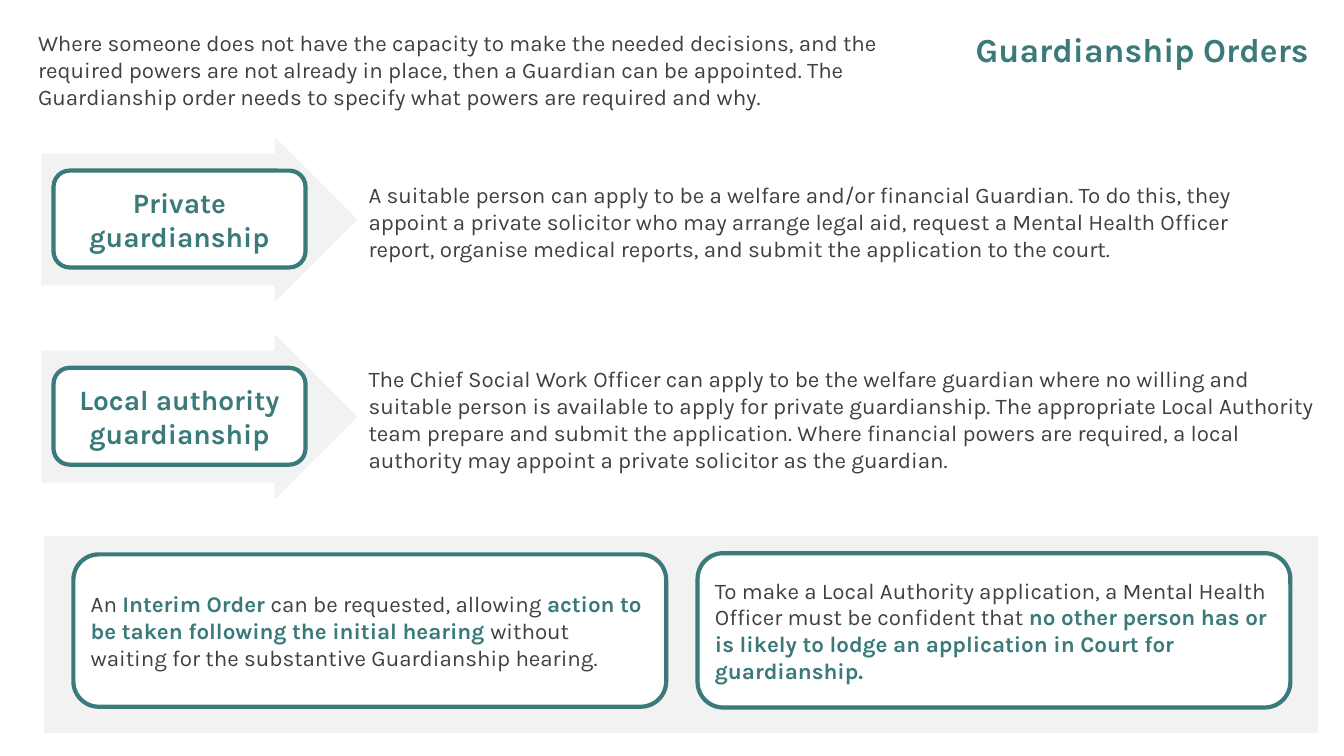
from pptx import Presentation
from pptx.dml.color import RGBColor
from pptx.enum.shapes import MSO_SHAPE as Preset
from pptx.enum.text import MSO_ANCHOR as Anchor, PP_ALIGN as Align
from pptx.util import Cm, Pt

TEAL = RGBColor(0x3A, 0x7A, 0x7A)
INK = RGBColor(0x40, 0x40, 0x40)
PALE = RGBColor(0xF2, 0xF2, 0xF2)
WHITE = RGBColor(0xFF, 0xFF, 0xFF)
FONT = "Karla"

ROUTES = [
    ("Private guardianship", 3.51, (4.17, 23.85, 2.82),
     "A suitable person can apply to be a welfare and/or financial Guardian. To do this, they "
     "appoint a private solicitor who may arrange legal aid, request a Mental Health Officer "
     "report, organise medical reports, and submit the application to the court."),
    ("Local authority guardianship", 8.48, (8.51, 24.82, 4.11),
     "The Chief Social Work Officer can apply to be the welfare guardian where no willing and "
     "suitable person is available to apply for private guardianship. The appropriate Local "
     "Authority team prepare and submit the application. Where financial powers are required, "
     "a local authority may appoint a private solicitor as the guardian."),
]


def write(frame, *parts, size=16, color=INK, bold=False, align=Align.LEFT, anchor=Anchor.MIDDLE):
    """Fill a text frame with plain parts and (text, True) emphasised parts."""
    frame.word_wrap = True
    frame.vertical_anchor = anchor
    para = frame.paragraphs[0]
    para.alignment = align
    for part in parts:
        text, strong = part if isinstance(part, tuple) else (part, False)
        span = para.add_run()
        span.text = text
        span.font.name = FONT
        span.font.size = Pt(size)
        span.font.bold = bold or strong
        span.font.color.rgb = TEAL if strong else color


class GuardianshipPage:
    """Draws the elements of one slide in a shared style."""

    def __init__(self, page):
        self.shapes = page.shapes

    def shape(self, preset, place, fill, line, width):
        shape = self.shapes.add_shape(preset, *map(Cm, place))
        shape.shadow.inherit = False
        shape.fill.solid()
        shape.fill.fore_color.rgb = fill
        shape.line.color.rgb = line
        shape.line.width = Pt(width)
        return shape

    def panel(self, place):
        self.shape(Preset.RECTANGLE, place, PALE, PALE, 1.5)

    def arrow(self, place):
        arrow = self.shape(Preset.RIGHT_ARROW, place, PALE, PALE, 1.5)
        arrow.adjustments[0] = 0.81
        arrow.adjustments[1] = 0.5

    def card(self, place, *parts, **style):
        card = self.shape(Preset.ROUNDED_RECTANGLE, place, WHITE, TEAL, 3)
        write(card.text_frame, *parts, **style)

    def text(self, place, *parts, **style):
        box = self.shapes.add_textbox(*map(Cm, place))
        write(box.text_frame, *parts, **style)

    def route(self, label, top, text_place, explanation):
        self.arrow((1.07, top, 7.9, 4.04))
        self.card((1.35, top + 0.79, 6.35, 2.44), label,
                  size=20, color=TEAL, bold=True, align=Align.CENTER)
        self.text((9.04, *text_place), explanation)


def main():
    deck = Presentation()
    deck.slide_width, deck.slide_height = Cm(33.87), Cm(19.05)
    page = GuardianshipPage(deck.slides.add_slide(deck.slide_layouts[6]))

    page.text((0.71, 0.64, 23.11, 2.24),
              "Where someone does not have the capacity to make the needed decisions, and the "
              "required powers are not already in place, then a Guardian can be appointed. The "
              "Guardianship order needs to specify what powers are required and why.")
    page.text((18.57, 0.61, 14.66, 1.27), "Guardianship Orders",
              size=24, color=TEAL, bold=True, align=Align.RIGHT, anchor=Anchor.TOP)

    for route in ROUTES:
        page.route(*route)

    page.panel((1.14, 13.54, 32.05, 4.9))
    page.card((1.85, 13.97, 14.94, 3.84),
              "An ", ("Interim Order ", True), "can be requested, allowing ",
              ("action to be taken following the initial hearing ", True),
              "without waiting for the substantive Guardianship hearing.")
    page.card((17.58, 13.94, 14.94, 3.89),
              "To make a Local Authority application, a Mental Health Officer must be "
              "confident that ",
              ("no other person has or is likely to lodge an application in Court for "
               "guardianship.", True))

    deck.save("out.pptx")


if __name__ == "__main__":
    main()
